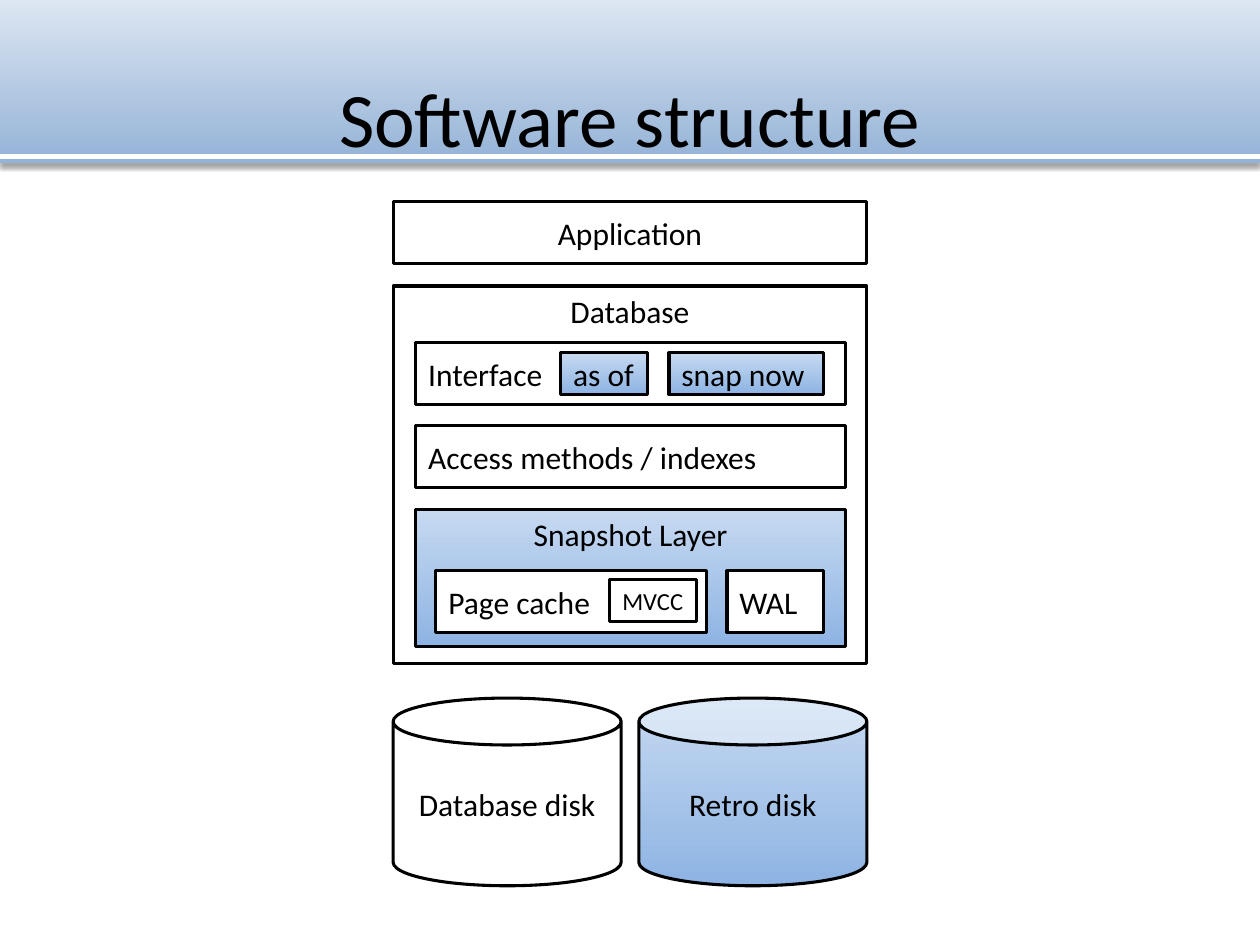
import pptx
import pptx.dml.color
import pptx.enum.shapes
import pptx.enum.text
import pptx.oxml
import pptx.oxml.ns
import pptx.util
from pptx.util import Inches

COLORS = {
    "ink": "000000",
    "paper": "FFFFFF",
    "band": ("95B3D7", "DCE6F2"),
    "retro": ("8EB4E3", "C6D9F1"),
}
FONT = "Calibri"
SHAPE = pptx.enum.shapes.MSO_SHAPE
ALIGN = pptx.enum.text.PP_ALIGN
ANCHOR = pptx.enum.text.MSO_ANCHOR
rgb = pptx.dml.color.RGBColor.from_string


def paint(shape, color):
    """Fill with nothing, one colour, or a (bottom, top) gradient."""
    shape.shadow.inherit = False
    if color is None:
        shape.fill.background()
    elif isinstance(color, tuple):
        shape.fill.gradient()
        shape.fill.gradient_angle = 90
        for stop, position, value in zip(shape.fill.gradient_stops, (0, 1), color):
            stop.position = position
            stop.color.rgb = rgb(value)
    else:
        shape.fill.solid()
        shape.fill.fore_color.rgb = rgb(color)


def write(shape, text, size, align, anchor):
    frame = shape.text_frame
    frame.text = text
    frame.word_wrap = True
    frame.vertical_anchor = anchor
    para = frame.paragraphs[0]
    para.alignment = align
    font = para.runs[0].font
    font.name = FONT
    font.size = pptx.util.Pt(size)
    font.color.rgb = rgb(COLORS["ink"])


deck = pptx.Presentation()
deck.slide_width, deck.slide_height = Inches(10), Inches(7.5)
page = deck.slides.add_slide(deck.slide_layouts[5])

# Title on a shaded band with a white rule
title = page.shapes.title
title.left, title.top = Inches(0.5), Inches(0.3)
title.width, title.height = Inches(9), Inches(1.25)
write(title, "Software structure", 44, ALIGN.CENTER, ANCHOR.MIDDLE)

band = page.shapes.add_shape(SHAPE.RECTANGLE, 0, 0, Inches(10), Inches(1.29))
paint(band, COLORS["band"])
band.line.fill.background()
effects = band._element.spPr.find(pptx.oxml.ns.qn("a:effectLst"))
effects.append(pptx.oxml.parse_xml(
    f'<a:outerShdw {pptx.oxml.ns.nsdecls("a")} blurRad="{Inches(0.04)}" '
    f'dist="{Inches(0.03)}" dir="5400000" rotWithShape="0">'
    f'<a:srgbClr val="{COLORS["ink"]}"><a:alpha val="35000"/></a:srgbClr></a:outerShdw>'))

rule = page.shapes.add_connector(
    pptx.enum.shapes.MSO_CONNECTOR.STRAIGHT, 0, Inches(1.24), Inches(10), Inches(1.24))
rule.line.color.rgb = rgb(COLORS["paper"])
rule.line.width = pptx.util.Pt(3)
rule._element.spPr.append(pptx.oxml.parse_xml(
    f'<a:effectLst {pptx.oxml.ns.nsdecls("a")}/>'))

for backdrop in (band, rule):
    title._element.addprevious(backdrop._element)

# Layers of the stack: outer and inner columns, row and tag heights
OUTER, OUTER_WIDTH = 3.12, 3.76
INNER, INNER_WIDTH = 3.3, 3.41
ROW, TAG = 0.49, 0.33
DISK_WIDTH, DISK_HEIGHT = 1.81, 1.49
DISK_TOP = 5.54
RETRO, PAPER = COLORS["retro"], COLORS["paper"]
CENTER, LEFT = ALIGN.CENTER, ALIGN.LEFT
TOP, MIDDLE = ANCHOR.TOP, ANCHOR.MIDDLE
RECT, CAN = SHAPE.RECTANGLE, SHAPE.CAN

parts = [
    # text, kind, left, top, width, height, fill, size, align, anchor
    ("Snapshot Layer", RECT, INNER, 4.04, INNER_WIDTH, 1.09, RETRO, 18, CENTER, TOP),
    ("Application", RECT, OUTER, 1.6, OUTER_WIDTH, ROW, None, 18, CENTER, MIDDLE),
    ("Database", RECT, OUTER, 2.27, OUTER_WIDTH, 3, None, 18, CENTER, TOP),
    ("Interface", RECT, INNER, 2.72, INNER_WIDTH, ROW, None, 18, LEFT, MIDDLE),
    ("Access methods / indexes", RECT, INNER, 3.38, INNER_WIDTH, ROW, None, 18, LEFT, MIDDLE),
    ("Page cache", RECT, 3.46, 4.53, 2.15, ROW, PAPER, 18, LEFT, MIDDLE),
    ("WAL", RECT, 5.77, 4.53, 0.77, ROW, PAPER, 18, LEFT, MIDDLE),
    ("snap now", RECT, 5.31, 2.8, 1.23, TAG, RETRO, 18, LEFT, MIDDLE),
    ("as of", RECT, 4.45, 2.8, 0.69, TAG, RETRO, 18, LEFT, MIDDLE),
    ("Database disk", CAN, OUTER, DISK_TOP, DISK_WIDTH, DISK_HEIGHT, None, 18, CENTER, MIDDLE),
    ("Retro disk", CAN, OUTER + OUTER_WIDTH - DISK_WIDTH, DISK_TOP, DISK_WIDTH, DISK_HEIGHT,
     RETRO, 18, CENTER, MIDDLE),
    ("MVCC", RECT, 4.84, 4.6, 0.69, TAG, None, 14, LEFT, MIDDLE),
]
for text, kind, left, top, width, height, fill, size, align, anchor in parts:
    box = page.shapes.add_shape(kind, Inches(left), Inches(top), Inches(width), Inches(height))
    paint(box, fill)
    box.line.color.rgb = rgb(COLORS["ink"])
    box.line.width = pptx.util.Pt(1.75)
    write(box, text, size, align, anchor)

deck.save("out.pptx")
